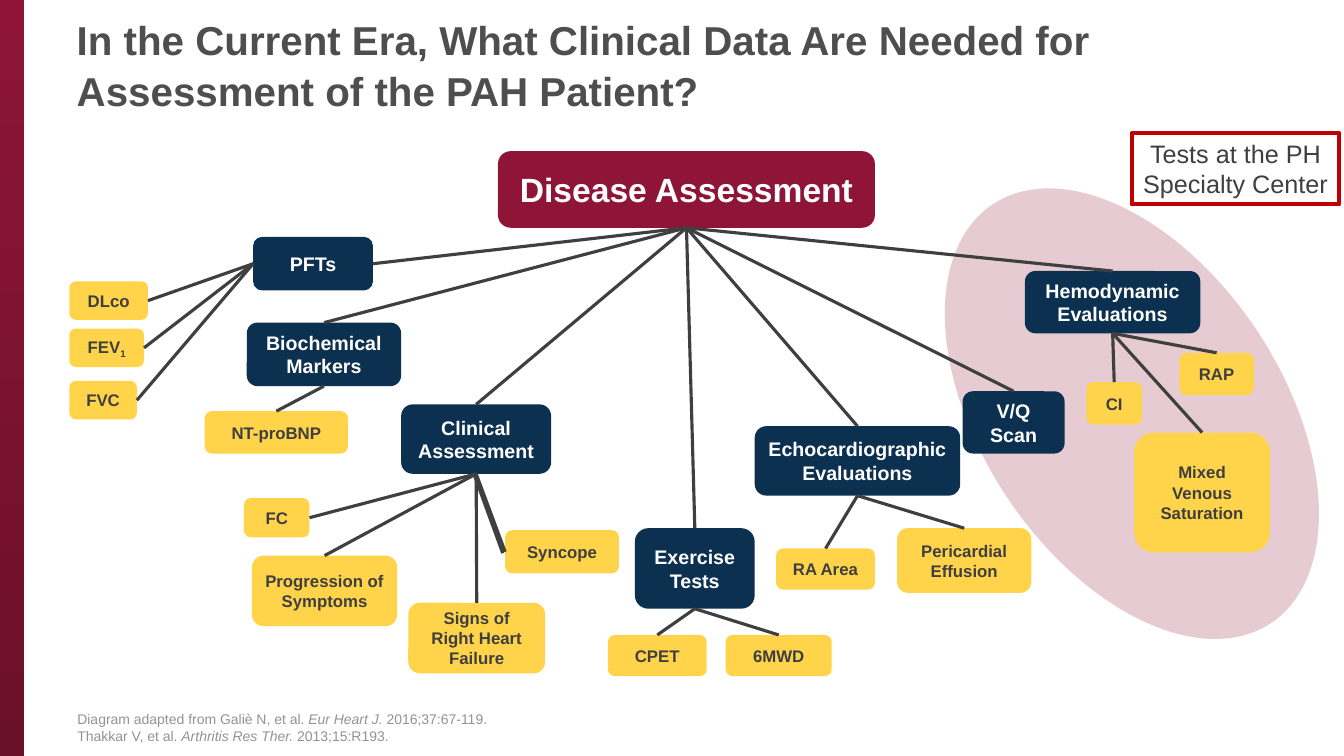
from dataclasses import dataclass

from lxml import etree
from pptx import Presentation
from pptx.dml.color import RGBColor
from pptx.enum.shapes import MSO_CONNECTOR, MSO_SHAPE
from pptx.enum.text import MSO_ANCHOR, MSO_AUTO_SIZE, PP_ALIGN
from pptx.oxml.ns import qn
from pptx.util import Cm, Pt

RECTANGLE, ROUNDED, OVAL = MSO_SHAPE.RECTANGLE, MSO_SHAPE.ROUNDED_RECTANGLE, MSO_SHAPE.OVAL
STRAIGHT = MSO_CONNECTOR.STRAIGHT
LEFT, CENTER = PP_ALIGN.LEFT, PP_ALIGN.CENTER
MIDDLE, LOWER = MSO_ANCHOR.MIDDLE, MSO_ANCHOR.BOTTOM
NO_AUTOFIT = MSO_AUTO_SIZE.NONE
TITLE_ONLY = 5
# Connection sites of a rectangle
TOP_SIDE, LEFT_SIDE, BOTTOM_SIDE, RIGHT_SIDE = range(4)


@dataclass(frozen=True)
class Theme:
    font: str = "Arial"
    maroon: str = "8E1537"
    dark_maroon: str = "6B1029"
    navy: str = "0C3150"
    yellow: str = "FFD44B"
    red: str = "C00000"
    white: str = "FFFFFF"
    dark: str = "3F3F3F"
    title: str = "4D4E4D"
    grey: str = "939393"
    title_size: float = 28.8
    root_size: int = 24
    callout_size: int = 18
    group_size: int = 14
    leaf_size: int = 12
    source_size: int = 10
    line_width: float = 2.25
    callout_width: int = 3


THEME = Theme()

# Boxes are left, top, width, height in centimetres.
# Group: text, box, side joined to the root, side joined to its tests, tests
# Test: text (subscript between bars), box, side joined to the group
GROUPS = [
    ("PFTs", (6.38, 5.97, 3.02, 1.35), RIGHT_SIDE, LEFT_SIDE, [
        ("DLco", (1.75, 7.09, 1.98, 0.97), RIGHT_SIDE),
        ("FEV|1|", (1.75, 8.28, 1.88, 0.97), RIGHT_SIDE),
        ("FVC", (1.75, 9.6, 1.7, 0.97), RIGHT_SIDE),
    ]),
    ("Biochemical Markers", (6.22, 8.13, 3.89, 1.6), TOP_SIDE, BOTTOM_SIDE, [
        ("NT-proBNP", (5.16, 10.36, 3.61, 1.07), TOP_SIDE),
    ]),
    ("Clinical Assessment", (10.11, 10.19, 3.78, 1.75), TOP_SIDE, BOTTOM_SIDE, [
        ("FC", (6.15, 12.55, 1.65, 0.99), RIGHT_SIDE),
        ("Progression of Symptoms", (6.35, 14, 3.66, 1.78), TOP_SIDE),
        ("Signs of Right Heart Failure", (10.29, 15.19, 3.45, 1.78), TOP_SIDE),
        ("Syncope", (12.73, 13.36, 2.87, 1.09), LEFT_SIDE),
    ]),
    ("Exercise Tests", (16, 13.31, 3.02, 2.03), TOP_SIDE, BOTTOM_SIDE, [
        ("CPET", (15.32, 16, 2.49, 1.04), TOP_SIDE),
        ("6MWD", (18.29, 16, 2.67, 1.04), TOP_SIDE),
    ]),
    ("Echocardiographic Evaluations", (19.02, 10.74, 5.18, 1.75), TOP_SIDE, BOTTOM_SIDE, [
        ("RA Area", (19.56, 13.82, 2.49, 1.04), TOP_SIDE),
        ("Pericardial Effusion", (22.61, 13.31, 3.38, 1.63), TOP_SIDE),
    ]),
    ("V/Q Scan", (24.26, 9.86, 2.57, 1.57), TOP_SIDE, BOTTOM_SIDE, []),
    ("Hemodynamic Evaluations", (25.83, 6.83, 4.42, 1.57), TOP_SIDE, BOTTOM_SIDE, [
        ("RAP", (29.72, 8.89, 1.88, 1.07), TOP_SIDE),
        ("CI", (27.38, 9.63, 1.4, 1.07), TOP_SIDE),
        ("Mixed Venous\nSaturation", (28.58, 10.9, 3.43, 3.02), TOP_SIDE),
    ]),
]


def rgb(color):
    return RGBColor.from_string(color)


def set_subscript(font):
    font._element.set("baseline", "-25000")


def set_italic(font):
    font.italic = True


def write(text_frame, text, size, color, bold=False, alignment=CENTER,
          anchor=MIDDLE, mark=set_subscript):
    """Fill a frame; parts between bars get the marked style."""
    text_frame.word_wrap = True
    text_frame.auto_size = NO_AUTOFIT
    text_frame.vertical_anchor = anchor
    text_frame.text = text.replace("|", "")
    for paragraph, line in zip(text_frame.paragraphs, text.split("\n")):
        paragraph.alignment = alignment
        paragraph.text = ""
        for index, part in enumerate(line.split("|")):
            if not part:
                continue
            run = paragraph.add_run()
            run.text = part
            run.font.name = THEME.font
            run.font.size = Pt(size)
            run.font.bold = bold
            run.font.color.rgb = rgb(color)
            if index % 2:
                mark(run.font)


def add_shape(slide, kind, box, fill=None):
    shape = slide.shapes.add_shape(kind, *map(Cm, box))
    shape.shadow.inherit = False
    shape.line.fill.background()
    if fill:
        shape.fill.solid()
        shape.fill.fore_color.rgb = rgb(fill)
    else:
        shape.fill.background()
    return shape


def add_box(slide, text, box, fill, size, color):
    shape = add_shape(slide, ROUNDED, box, fill)
    write(shape.text_frame, text, size, color, bold=True)
    return shape


def add_line(slide, start=(0, 0), end=(0, 0)):
    line = slide.shapes.add_connector(STRAIGHT, *map(Cm, (*start, *end)))
    line.line.color.rgb = rgb(THEME.dark)
    line.line.width = Pt(THEME.line_width)
    etree.SubElement(line._element.spPr, qn("a:effectLst"))
    return line


def join(slide, parent, parent_side, child, child_side):
    line = add_line(slide)
    line.begin_connect(parent, parent_side)
    line.end_connect(child, child_side)


def add_side_bar(slide):
    bar = add_shape(slide, RECTANGLE, (0, 0, 0.61, 19.05), THEME.maroon)
    bar.fill.gradient()
    bar.fill.gradient_angle = 270
    for stop, color in zip(bar.fill.gradient_stops, (THEME.maroon, THEME.dark_maroon)):
        stop.color.rgb = rgb(color)


def add_specialty_area(slide):
    area = add_shape(slide, OVAL, (24.74, 4.09, 7.57, 12.67), THEME.maroon)
    area.rotation = 326.4
    color = area.fill._xPr.find(qn("a:solidFill"))[0]
    etree.SubElement(color, qn("a:alpha")).set("val", "22000")
    callout = add_shape(slide, RECTANGLE, (28.52, 3.35, 5.23, 1.8))
    callout.line.color.rgb = rgb(THEME.red)
    callout.line.width = Pt(THEME.callout_width)
    write(callout.text_frame, "Tests at the PH Specialty Center",
          THEME.callout_size, THEME.dark)


def add_title(slide, text):
    title = slide.shapes.title
    title.left, title.top, title.width, title.height = map(Cm, (1.68, 0.41, 30.53, 2.39))
    write(title.text_frame, text, THEME.title_size, THEME.title, bold=True, alignment=LEFT)
    title.text_frame.paragraphs[0].line_spacing = 1.06


def add_tree(slide):
    root = add_box(slide, "Disease Assessment", (12.55, 3.81, 9.5, 1.93),
                   THEME.maroon, THEME.root_size, THEME.white)
    for text, box, root_side, test_side, tests in GROUPS:
        group = add_box(slide, text, box, THEME.navy, THEME.group_size, THEME.white)
        join(slide, root, BOTTOM_SIDE, group, root_side)
        for test_text, test_box, side in tests:
            test = add_box(slide, test_text, test_box, THEME.yellow,
                           THEME.leaf_size, THEME.dark)
            join(slide, group, test_side, test, side)
    # Second stroke beside the Syncope branch
    add_line(slide, (11.96, 11.99), (12.67, 13.94))


def add_sources(slide, text):
    sources = slide.shapes.add_textbox(*map(Cm, (1.7, 17.65, 29.85, 1.22)))
    write(sources.text_frame, text, THEME.source_size, THEME.grey,
          alignment=LEFT, anchor=LOWER, mark=set_italic)


def main():
    presentation = Presentation()
    presentation.slide_width, presentation.slide_height = Cm(33.87), Cm(19.05)
    slide = presentation.slides.add_slide(presentation.slide_layouts[TITLE_ONLY])
    add_side_bar(slide)
    add_specialty_area(slide)
    add_title(slide, "In the Current Era, What Clinical Data Are Needed for "
                     "Assessment of the PAH Patient?")
    add_tree(slide)
    add_sources(slide, "Diagram adapted from Galiè N, et al. |Eur Heart J. |2016;37:67-119.\n"
                       "Thakkar V, et al. |Arthritis Res Ther. |2013;15:R193.")
    presentation.save("out.pptx")


if __name__ == "__main__":
    main()
